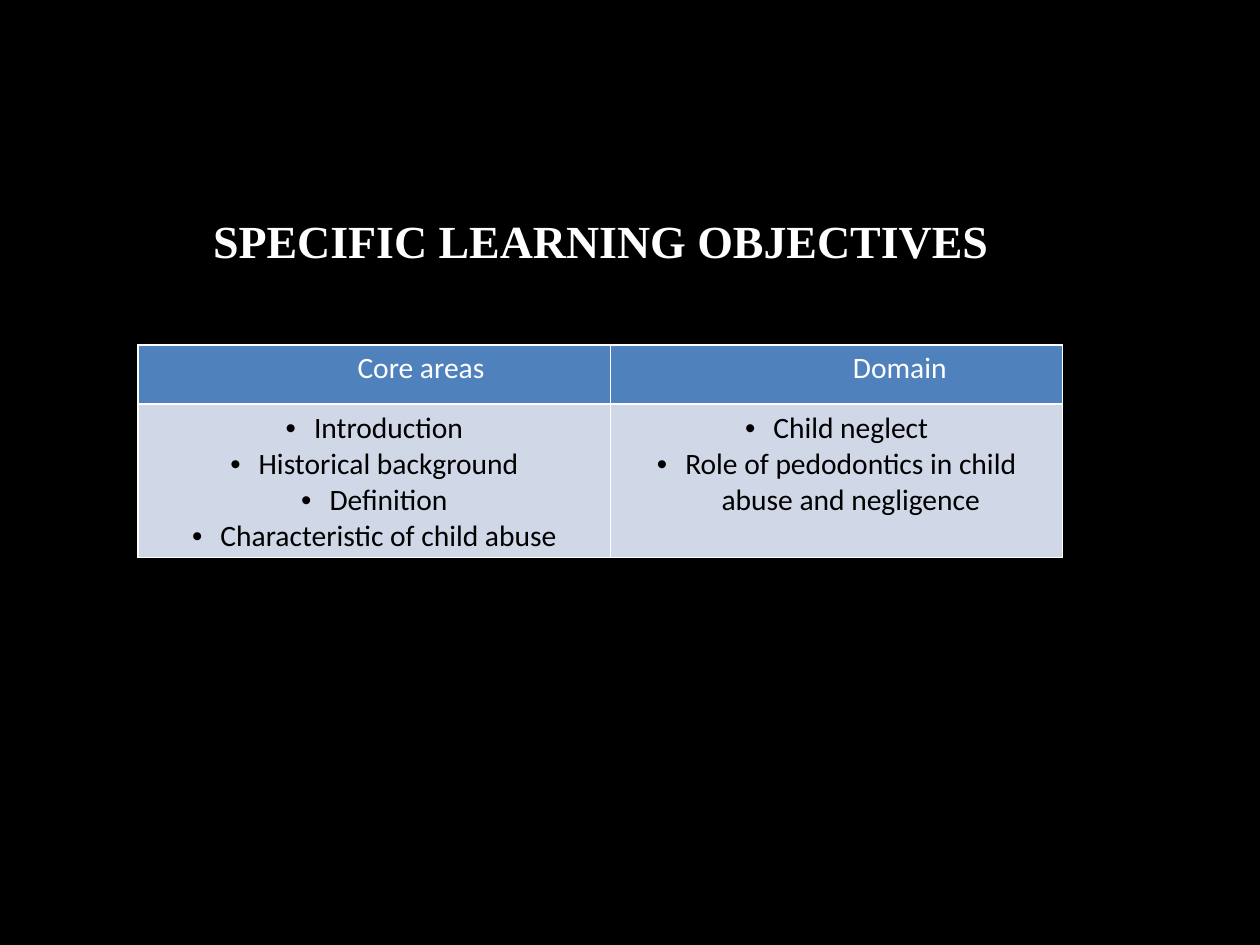
from lxml import etree
from pptx import Presentation
from pptx import util as u
from pptx.dml.color import RGBColor
from pptx.enum import text
from pptx.oxml import ns

# Content
TITLE = "SPECIFIC LEARNING OBJECTIVES"
COLUMNS = [
    {"heading": "Core areas", "width": 4, "indent": 0.79,
     "items": ["Introduction", "Historical background", "Definition",
               "Characteristic of child abuse"]},
    {"heading": "Domain", "width": 3.83, "indent": 1.07,
     "items": ["Child neglect",
               "Role of pedodontics in child abuse and negligence"]},
]

# Theme and layout, in inches and points
THEME = {
    "background": "000000", "border": "FFFFFF",
    "heading_fill": "4F81BD", "body_fill": "D0D8E8",
    "title": {"name": "Times New Roman", "size": 28, "bold": True, "color": "FFFFFF"},
    "heading": {"name": "Calibri", "size": 18, "bold": False, "color": "FFFFFF"},
    "body": {"name": "Calibri", "size": 18, "bold": False, "color": "000000"},
}
SLIDE_SIZE = (10.67, 8)
TITLE_BOX = (1.62, 1.75, 6.93, 0.57)
TABLE_ORIGIN = (1.17, 2.92)
ROW_HEIGHTS = (0.5, 1.3)
BULLET_INDENT = 0.24


def write(paragraph, words, style):
    paragraph.alignment = text.PP_ALIGN.CENTER
    run = paragraph.add_run()
    run.text = words
    formats = {**style, "size": u.Pt(style["size"])}
    run.font.color.rgb = RGBColor.from_string(formats.pop("color"))
    for name, value in formats.items():
        setattr(run.font, name, value)


def indent(paragraph, left, bullet=False):
    properties = paragraph._p.get_or_add_pPr()
    properties.set("marL", str(u.Inches(left)))
    if bullet:
        properties.set("indent", str(-u.Inches(left)))
        etree.SubElement(properties, ns.qn("a:buFont"), typeface="Arial")
        etree.SubElement(properties, ns.qn("a:buChar"), char="•")


def paint(cell, fill):
    # Borders come before the fill in the cell properties
    properties = cell._tc.get_or_add_tcPr()
    for side in "LRTB":
        line = etree.SubElement(properties, ns.qn(f"a:ln{side}"), w=str(u.Pt(1)))
        solid = etree.SubElement(line, ns.qn("a:solidFill"))
        etree.SubElement(solid, ns.qn("a:srgbClr"), val=THEME["border"])
    cell.fill.solid()
    cell.fill.fore_color.rgb = RGBColor.from_string(fill)


presentation = Presentation()
presentation.slide_width, presentation.slide_height = map(u.Inches, SLIDE_SIZE)
slide = presentation.slides.add_slide(presentation.slide_layouts[6])
slide.background.fill.solid()
slide.background.fill.fore_color.rgb = RGBColor.from_string(THEME["background"])

# Title
title_frame = slide.shapes.add_textbox(*map(u.Inches, TITLE_BOX)).text_frame
title_frame.word_wrap = False
write(title_frame.paragraphs[0], TITLE, THEME["title"])

# Table: one heading row above one row of bulleted lists
table_size = (sum(column["width"] for column in COLUMNS), sum(ROW_HEIGHTS))
table = slide.shapes.add_table(
    len(ROW_HEIGHTS), len(COLUMNS), *map(u.Inches, TABLE_ORIGIN + table_size)).table
for row, height in zip(table.rows, ROW_HEIGHTS):
    row.height = u.Inches(height)

for index, column in enumerate(COLUMNS):
    table.columns[index].width = u.Inches(column["width"])
    heading, body = table.cell(0, index), table.cell(1, index)
    paint(heading, THEME["heading_fill"])
    paint(body, THEME["body_fill"])

    paragraph = heading.text_frame.paragraphs[0]
    indent(paragraph, column["indent"])
    write(paragraph, column["heading"], THEME["heading"])

    for number, item in enumerate(column["items"]):
        frame = body.text_frame
        paragraph = frame.add_paragraph() if number else frame.paragraphs[0]
        indent(paragraph, BULLET_INDENT, bullet=True)
        write(paragraph, item, THEME["body"])

presentation.save("out.pptx")
